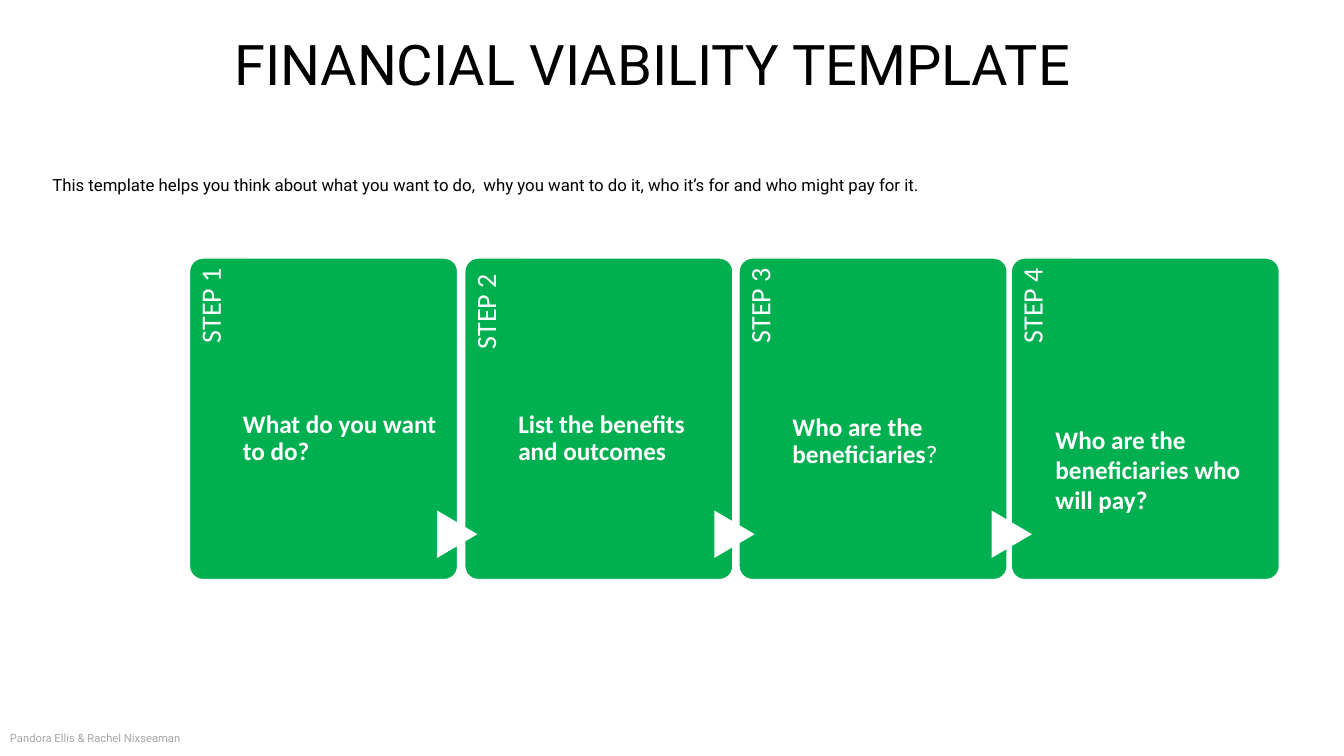
from pptx import Presentation
from pptx.dml.color import RGBColor
from pptx.enum.shapes import MSO_SHAPE
from pptx.enum.text import MSO_ANCHOR, MSO_AUTO_SIZE, PP_ALIGN
from pptx.util import Inches, Pt

STEPS = [
    (1.88, "STEP 1", 0.1, [("What do you want to do?", True)], 1.52),
    (4.61, "STEP 2", 0.16, [("List the benefits and outcomes", True)], 1.52),
    (7.33, "STEP 3", 0.1, [("Who are the beneficiaries", True), ("?", False)], 1.55),
    (10.03, "STEP 4", 0.1, [], 0),
]
CARD_TOP, CARD_WIDTH, CARD_HEIGHT = 2.56, 2.66, 3.19
ARROW_LEFT, ARROW_PITCH = 4.3, 2.75


def color(hex_value):
    return RGBColor.from_string(hex_value)


def write_text(shape, runs, size, font, fill, align=PP_ALIGN.LEFT, spacing=1.0,
               insets=(0.1, 0.05, 0.1, 0.05)):
    frame = shape.text_frame
    frame.word_wrap = True
    frame.auto_size = MSO_AUTO_SIZE.NONE
    frame.vertical_anchor = MSO_ANCHOR.TOP
    (frame.margin_left, frame.margin_top,
     frame.margin_right, frame.margin_bottom) = map(Inches, insets)
    paragraph = frame.paragraphs[0]
    paragraph.alignment = align
    paragraph.line_spacing = spacing
    for text, bold in runs:
        run = paragraph.add_run()
        run.text = text
        run.font.name = font
        run.font.size = Pt(size)
        run.font.bold = bold
        run.font.color.rgb = color(fill)


class SlideBuilder:
    body_font = "Roboto"
    card_font = "Calibri"
    black = "000000"
    white = "FFFFFF"
    green = "00B050"
    grey = "A5A5A5"

    def __init__(self, slide):
        self.slide = slide

    def title(self, text, left, top, width, height):
        shape = self.slide.shapes.title
        shape.left, shape.top = Inches(left), Inches(top)
        shape.width, shape.height = Inches(width), Inches(height)
        write_text(shape, [(text, False)], 40, self.body_font, self.black,
                   align=PP_ALIGN.CENTER, spacing=0.9)

    def text(self, runs, left, top, width, height, size, font, fill, rotation=0, **style):
        shape = self.slide.shapes.add_textbox(
            Inches(left), Inches(top), Inches(width), Inches(height))
        shape.rotation = rotation
        write_text(shape, runs, size, font, fill, **style)

    def preset(self, kind, left, top, width, height, fill):
        shape = self.slide.shapes.add_shape(
            kind, Inches(left), Inches(top), Inches(width), Inches(height))
        shape.shadow.inherit = False
        shape.fill.solid()
        shape.fill.fore_color.rgb = color(fill)
        return shape

    def card(self, left):
        shape = self.preset(MSO_SHAPE.ROUNDED_RECTANGLE, left, CARD_TOP,
                            CARD_WIDTH, CARD_HEIGHT, self.green)
        shape.adjustments[0] = 0.05
        shape.line.color.rgb = color(self.white)
        shape.line.width = Pt(1)

    def step_label(self, text, card_left, end_inset):
        self.text([(text, False)], card_left - 1.04, 3.6, 2.61, 0.53, 20,
                  self.card_font, self.white, rotation=270, align=PP_ALIGN.RIGHT,
                  spacing=0.9, insets=(0, 0.07, end_inset, 0))

    def question(self, runs, card_left, top_inset):
        self.text(runs, card_left + 0.53, CARD_TOP, 1.98, CARD_HEIGHT, 18,
                  self.card_font, self.white, spacing=0.9, insets=(0, top_inset, 0, 0))

    def arrow(self, left):
        shape = self.preset(MSO_SHAPE.FLOWCHART_EXTRACT, left, 5.1, 0.47, 0.4, self.white)
        shape.rotation = 90
        shape.line.fill.background()


def main():
    presentation = Presentation()
    presentation.slide_width = Inches(13.33)
    presentation.slide_height = Inches(7.5)
    builder = SlideBuilder(presentation.slides.add_slide(presentation.slide_layouts[5]))

    builder.title("FINANCIAL VIABILITY TEMPLATE", 1.47, 0.32, 10, 0.8)
    builder.text([("This template helps you think about what you want to do,  why you want "
                   "to do it, who it’s for and who might pay for it.", False)],
                 0.42, 1.54, 11.15, 0.71, 12, builder.body_font, builder.black, spacing=1.7)

    for index, (left, label, end_inset, question, top_inset) in enumerate(STEPS):
        builder.card(left)
        builder.step_label(label, left, end_inset)
        if index > 0:
            builder.arrow(ARROW_LEFT + (index - 1) * ARROW_PITCH)
        if question:
            builder.question(question, left, top_inset)

    builder.text([("Who are the beneficiaries who will pay?", True)],
                 10.37, 4.16, 2.21, 1.01, 18, builder.card_font, builder.white)
    builder.text([("Pandora Ellis & Rachel Nixseaman", False)], 0, 7.16, 3.98, 0.34, 8,
                 builder.body_font, builder.grey, insets=(0.1, 0.1, 0.1, 0.1))

    presentation.save("out.pptx")


if __name__ == "__main__":
    main()
